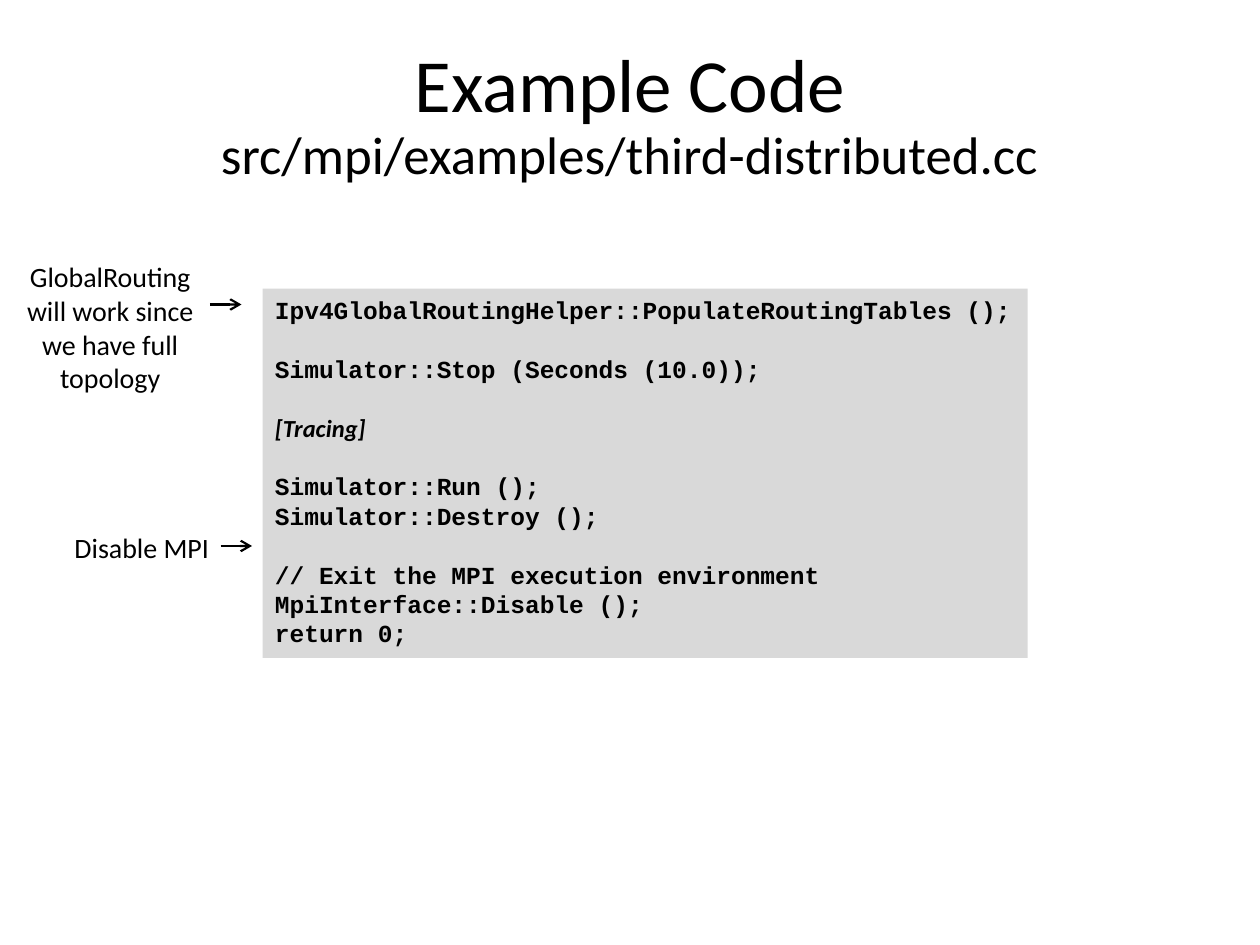
"""Build the slide that explains the end of the distributed example code."""
from pptx import Presentation
from pptx.dml.color import RGBColor
from pptx.enum.shapes import MSO_CONNECTOR as Connector, MSO_SHAPE as Shape
from pptx.enum.text import MSO_ANCHOR as Anchor, MSO_AUTO_SIZE as AutoSize, PP_ALIGN as Align
from pptx.oxml.ns import qn
from pptx.util import Pt
from lxml.etree import SubElement


def color(value):
    return RGBColor.from_string(value)


def add_text(paragraph, text, size, font="Calibri", bold=False, italic=False, align=Align.CENTER):
    paragraph.alignment = align
    run = paragraph.add_run()
    run.text = text
    run.font.size = Pt(size)
    run.font.name = font
    run.font.bold = bold
    run.font.italic = italic
    run.font.color.rgb = color("000000")


presentation = Presentation()
presentation.slide_width, presentation.slide_height = Pt(720), Pt(540)
slide = presentation.slides.add_slide(presentation.slide_layouts[5])

title = slide.shapes.title
title.left, title.top, title.width, title.height = Pt(36), Pt(21.6), Pt(648), Pt(90)
title.text_frame.auto_size = AutoSize.NONE
title.text_frame.vertical_anchor = Anchor.MIDDLE
heading = title.text_frame.paragraphs[0]
heading.line_spacing = 0.9
add_text(heading, "Example Code", 42.9)
heading.add_line_break()
add_text(heading, "src/mpi/examples/third-distributed.cc", 30.2)

code_blocks = [
    ["Ipv4GlobalRoutingHelper::PopulateRoutingTables ();"],
    ["Simulator::Stop (Seconds (10.0));"],
    ["[Tracing]"],
    ["Simulator::Run ();", "Simulator::Destroy ();"],
    ["// Exit the MPI execution environment", "MpiInterface::Disable ();", "return 0;"],
]
line_height = Pt(16.8)
code_box = slide.shapes.add_shape(Shape.RECTANGLE, Pt(150), Pt(165), Pt(437.3), Pt(211))
code_box.shadow.inherit = False
code_box.fill.solid()
code_box.fill.fore_color.rgb = color("D9D9D9")
code_box.line.fill.background()
code_frame = code_box.text_frame
code_frame.word_wrap = False
code_frame.vertical_anchor = Anchor.TOP
paragraph = code_frame.paragraphs[0]
for block_index, block in enumerate(code_blocks):
    for line_index, line in enumerate(block):
        if block_index or line_index:
            paragraph = code_frame.add_paragraph()
        paragraph.line_spacing = line_height
        if block_index and line_index == 0:
            paragraph.space_before = line_height
        placeholder_line = line.startswith("[")
        add_text(paragraph, line, 14, font="Calibri" if placeholder_line else "Courier New",
                 bold=True, italic=placeholder_line, align=Align.LEFT)

notes = [
    (["GlobalRouting", "will work since we have full topology"], 6, 145, 85, 120, 174),
    (["Disable MPI"], 24, 299.5, 26.6, 126, 312),
]
for lines, left, top, height, arrow_left, arrow_top in notes:
    note_frame = slide.shapes.add_textbox(Pt(left), Pt(top), Pt(114), Pt(height)).text_frame
    note_frame.word_wrap = True
    for index, line in enumerate(lines):
        paragraph = note_frame.add_paragraph() if index else note_frame.paragraphs[0]
        add_text(paragraph, line, 16)

    arrow = slide.shapes.add_connector(
        Connector.STRAIGHT, Pt(arrow_left), Pt(arrow_top), Pt(arrow_left + 18), Pt(arrow_top))
    arrow.line.color.rgb = color("000000")
    arrow.line.width = Pt(1.25)
    SubElement(arrow.line._get_or_add_ln(), qn("a:tailEnd"), type="arrow")
    SubElement(arrow._element.spPr, qn("a:effectLst"))

presentation.save("out.pptx")
